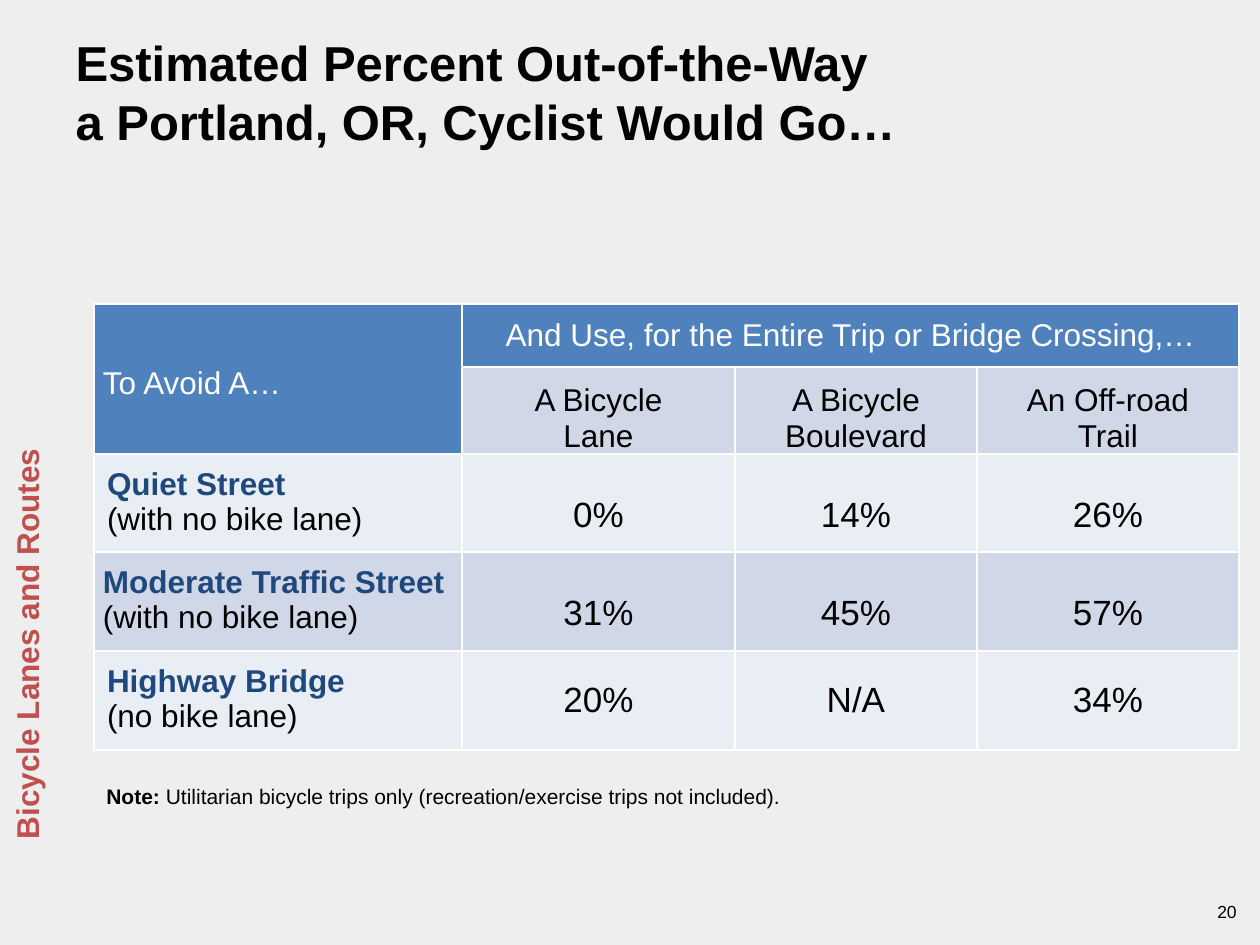
"""Build the slide on how far Portland cyclists detour to use better routes."""
from dataclasses import dataclass

from lxml.etree import SubElement
from pptx import Presentation
from pptx.dml.color import RGBColor as RGB
from pptx.enum.text import MSO_ANCHOR as Anchor, MSO_AUTO_SIZE as AutoSize, PP_ALIGN as Align
from pptx.oxml.ns import qn
from pptx.util import Pt

SCALE = 914400 / 126
FONT = "Arial"
COLORS = {
    "background": "EEEEEE", "black": "000000", "white": "FFFFFF",
    "header": "4F81BD", "band": "D0D8E8", "light": "E9EDF4",
    "street": "1F497D", "section": "C0504D",
}
COL_WIDTHS = (368, 273, 242, 262)
ROW_HEIGHTS = (63, 87, 98, 99, 99)


@dataclass
class Run:
    text: str
    size: int = 18
    color: str = "black"
    bold: bool = False


@dataclass
class Box:
    left: int
    top: int
    width: int
    height: int
    runs: list[Run]
    align: Align = Align.LEFT
    rotation: int = 0


@dataclass
class CellStyle:
    fill: str
    anchor: Anchor = Anchor.MIDDLE
    align: Align = Align.CENTER
    left: int = 9
    top: int = 13
    bottom: int = 13


@dataclass
class Street:
    name: str
    detail: str
    percents: tuple[str, str, str]
    fill: str
    indent: int = 13
    drop: int = 0


STREETS = [
    Street("Quiet Street", "(with no bike lane)", ("0%", "14%", "26%"), "light", drop=24),
    Street("Moderate Traffic Street", "(with\u00a0no\u00a0bike\u00a0lane)".replace("\u00a0", " "),
           ("31%", "45%", "57%"), "band", indent=9, drop=24),
    Street("Highway Bridge", "(no bike lane)", ("20%", "N/A", "34%"), "light"),
]
BOXES = [
    Box(955, 895, 294, 50, [Run("20", 10)], Align.RIGHT),
    Box(94, 777, 1124, 38, [Run("Note: ", 12, bold=True),
        Run("Utilitarian bicycle trips only (recreation/exercise trips not included).", 12)]),
    Box(-299, 501, 651, 50, [Run("Bicycle Lanes and Routes", 18, "section", True)], rotation=270),
]


def px(n: int) -> int:
    return round(n * SCALE)


def rgb(name: str) -> RGB:
    return RGB.from_string(COLORS[name])


def write(tf, runs: list[Run], align: Align = Align.LEFT) -> None:
    tf.word_wrap = True
    p = tf.paragraphs[0]
    p.alignment = align
    for run in runs:
        for i, line in enumerate(run.text.split("\n")):
            if i:
                p.add_line_break()
            if not line:
                continue
            r = p.add_run()
            r.text = line
            r.font.name, r.font.size, r.font.bold = FONT, Pt(run.size), run.bold
            r.font.color.rgb = rgb(run.color)


def place(sp, left: int, top: int, width: int, height: int) -> None:
    sp.left, sp.top, sp.width, sp.height = map(px, (left, top, width, height))


def add_title(s, text: str) -> None:
    sp = s.shapes.title
    place(sp, 63, 0, 1134, 157)
    sp.text_frame.auto_size = AutoSize.NONE
    sp.text_frame.vertical_anchor = Anchor.BOTTOM
    write(sp.text_frame, [Run(text, 28, bold=True)])


def add_box(s, box: Box) -> None:
    sp = s.shapes.add_textbox(*map(px, (box.left, box.top, box.width, box.height)))
    sp.rotation = box.rotation
    write(sp.text_frame, box.runs, box.align)


def style_cell(cell, style: CellStyle) -> None:
    tc_pr = cell._tc.get_or_add_tcPr()
    for side in ("a:lnL", "a:lnR", "a:lnT", "a:lnB"):
        ln = SubElement(tc_pr, qn(side), w=str(Pt(1)))
        SubElement(SubElement(ln, qn("a:solidFill")), qn("a:srgbClr"), val=COLORS["white"])
    cell.fill.solid()
    cell.fill.fore_color.rgb = rgb(style.fill)
    cell.vertical_anchor = style.anchor
    cell.margin_left, cell.margin_right = px(style.left), px(9)
    cell.margin_top, cell.margin_bottom = px(style.top), px(style.bottom)


def fill_cell(cell, runs: list[Run], style: CellStyle) -> None:
    style_cell(cell, style)
    write(cell.text_frame, runs, style.align)


def add_detours(s) -> None:
    size = sum(COL_WIDTHS), sum(ROW_HEIGHTS)
    frame = s.shapes.add_table(len(ROW_HEIGHTS), len(COL_WIDTHS), *map(px, (94, 304, *size)))
    table = frame.table
    for col, width in zip(table.columns, COL_WIDTHS):
        col.width = px(width)
    for row, height in zip(table.rows, ROW_HEIGHTS):
        row.height = px(height)
    header = CellStyle("header")
    for spanned in ((1, 0), (0, 2), (0, 3)):
        style_cell(table.cell(*spanned), header)
    table.cell(0, 0).merge(table.cell(1, 0))
    table.cell(0, 1).merge(table.cell(0, 3))
    fill_cell(table.cell(0, 0), [Run("To Avoid A…", color="white")],
              CellStyle("header", align=Align.LEFT, top=10, bottom=0))
    fill_cell(table.cell(0, 1),
              [Run("And Use, for the Entire Trip or Bridge Crossing,…", color="white")], header)
    routes = ("A Bicycle\nLane", "A Bicycle\nBoulevard", "An Off-road\nTrail")
    for c, route in enumerate(routes, 1):
        fill_cell(table.cell(1, c), [Run(route)],
                  CellStyle("band", Anchor.BOTTOM, top=0, bottom=0))
    for r, street in enumerate(STREETS, 2):
        fill_cell(table.cell(r, 0),
                  [Run(street.name + "\n", color="street", bold=True), Run(street.detail)],
                  CellStyle(street.fill, Anchor.TOP, Align.LEFT, left=street.indent))
        for c, percent in enumerate(street.percents, 1):
            fill_cell(table.cell(r, c), [Run(percent, 20)],
                      CellStyle(street.fill, top=13 + street.drop))


def main() -> None:
    prs = Presentation()
    prs.slide_width, prs.slide_height = px(1260), px(945)
    s = prs.slides.add_slide(prs.slide_layouts[5])
    s.background.fill.solid()
    s.background.fill.fore_color.rgb = rgb("background")
    add_title(s, "Estimated Percent Out-of-the-Way\na Portland, OR, Cyclist Would Go…")
    add_detours(s)
    for box in BOXES:
        add_box(s, box)
    prs.save("out.pptx")


if __name__ == "__main__":
    main()
